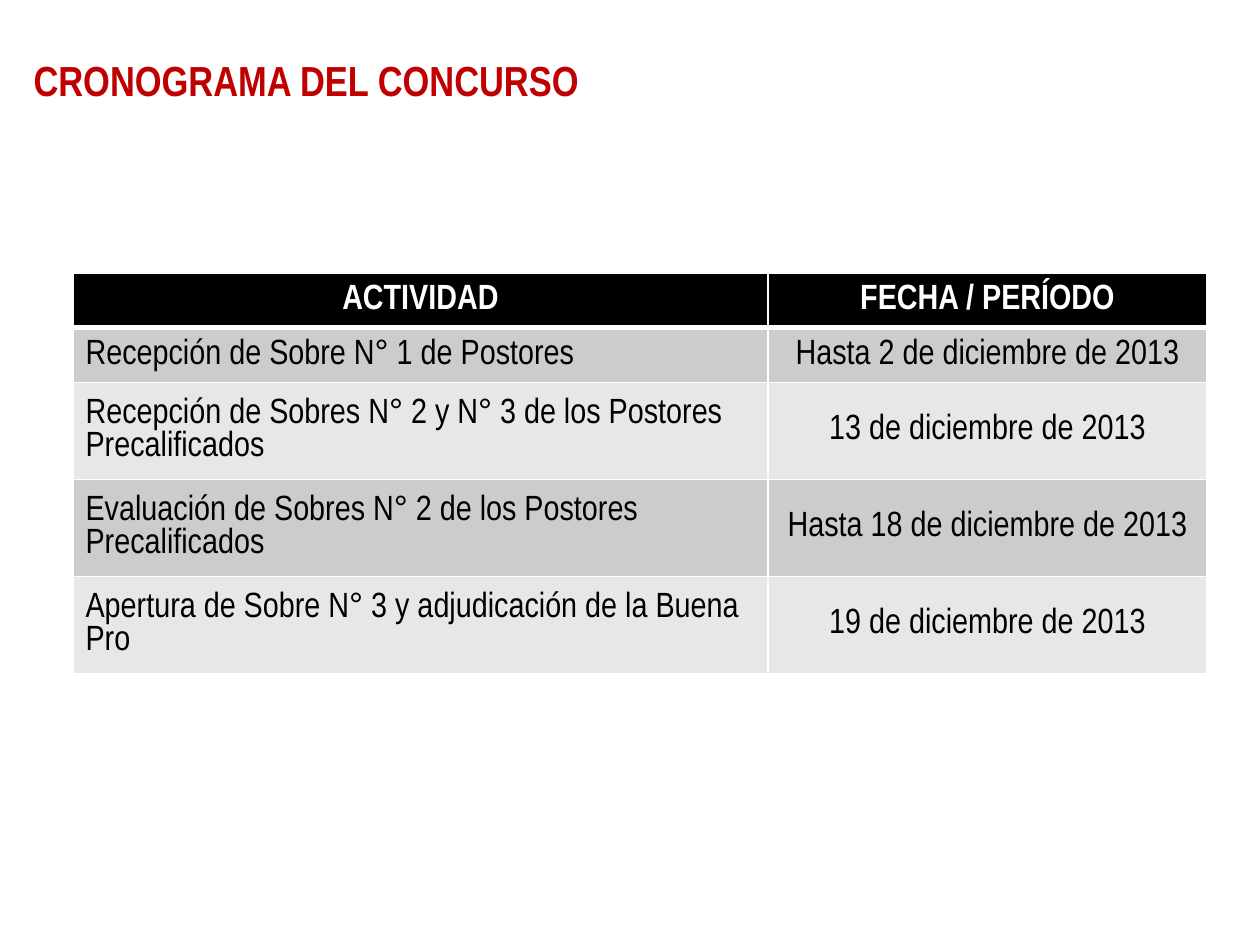
from lxml import etree
from pptx import Presentation
from pptx.dml.color import RGBColor
from pptx.enum.text import MSO_ANCHOR, MSO_AUTO_SIZE, PP_ALIGN
from pptx.oxml.ns import qn
from pptx.util import Pt

EMU_PER_PX = 914400 // 126
LEFT, CENTER = PP_ALIGN.LEFT, PP_ALIGN.CENTER
TOP, MIDDLE = MSO_ANCHOR.TOP, MSO_ANCHOR.MIDDLE
GROW = MSO_AUTO_SIZE.SHAPE_TO_FIT_TEXT

TITLE = "CRONOGRAMA DEL CONCURSO"
SCHEDULE = [
    ("ACTIVIDAD", "FECHA / PERÍODO"),
    ("Recepción de Sobre N° 1 de Postores", "Hasta 2 de diciembre de 2013"),
    ("Recepción de Sobres N° 2 y N° 3 de los Postores Precalificados",
     "13 de diciembre de 2013"),
    ("Evaluación de Sobres N° 2 de los Postores Precalificados",
     "Hasta 18 de diciembre de 2013"),
    ("Apertura de Sobre N° 3 y adjudicación de la Buena Pro",
     "19 de diciembre de 2013"),
]
COLUMN_WIDTHS = [695, 439]
ROW_HEIGHTS = [54, 54, 97, 97, 97]


def px(length):
    return length * EMU_PER_PX


def color(value):
    return RGBColor.from_string(value)


class SlideBuilder:
    font_name = "Arial Narrow"
    red, black, white = "C00000", "000000", "FFFFFF"
    bands = ["CCCCCC", "E7E7E7"]

    def __init__(self, deck):
        self.page = deck.slides.add_slide(deck.slide_layouts[5])

    def add_text(self, frame, text, size, ink, bold, align):
        para = frame.paragraphs[0]
        para.alignment = align
        span = para.add_run()
        span.text = text
        values = {"name": self.font_name, "size": Pt(size), "bold": bold}
        for name, value in values.items():
            setattr(span.font, name, value)
        span.font.color.rgb = color(ink)

    def title(self, text, left, top, width, height):
        box = self.page.shapes.title
        place = {"left": left, "top": top, "width": width, "height": height}
        for name, value in place.items():
            setattr(box, name, px(value))
        frame = box.text_frame
        layout = {"word_wrap": True, "auto_size": GROW, "vertical_anchor": TOP}
        for name, value in layout.items():
            setattr(frame, name, value)
        self.add_text(frame, text, 24, self.red, True, LEFT)

    def borders(self, cell, top, bottom):
        """Draw white cell borders; top and bottom widths are in points."""
        properties = cell._tc.get_or_add_tcPr()
        widths = {"lnL": 1, "lnR": 1, "lnT": top, "lnB": bottom}
        for index, (tag, width) in enumerate(widths.items()):
            line = etree.Element(qn(f"a:{tag}"), w=str(Pt(width)))
            fill = etree.SubElement(line, qn("a:solidFill"))
            etree.SubElement(fill, qn("a:srgbClr"), val=self.white)
            properties.insert(index, line)

    def table(self, rows, left, top, widths, heights):
        table = self.page.shapes.add_table(
            len(rows), len(widths), px(left), px(top),
            px(sum(widths)), px(sum(heights))).table
        for column, width in zip(table.columns, widths):
            column.width = px(width)
        for row, height in zip(table.rows, heights):
            row.height = px(height)
        for r, texts in enumerate(rows):
            header = r == 0
            fill = self.black if header else self.bands[(r - 1) % 2]
            for c, text in enumerate(texts):
                cell = table.cell(r, c)
                cell.vertical_anchor = MIDDLE
                cell.fill.solid()
                cell.fill.fore_color.rgb = color(fill)
                self.borders(cell, 3 if r == 1 else 1, 3 if header else 1)
                self.add_text(cell.text_frame, text, 20,
                              self.white if header else self.black, header,
                              CENTER if header or c == 1 else LEFT)


def main():
    deck = Presentation()
    deck.slide_width, deck.slide_height = px(1260), px(945)
    builder = SlideBuilder(deck)
    builder.title(TITLE, 21, 48, 777, 63)
    builder.table(SCHEDULE, 73, 273, COLUMN_WIDTHS, ROW_HEIGHTS)
    deck.save("out.pptx")


if __name__ == "__main__":
    main()
